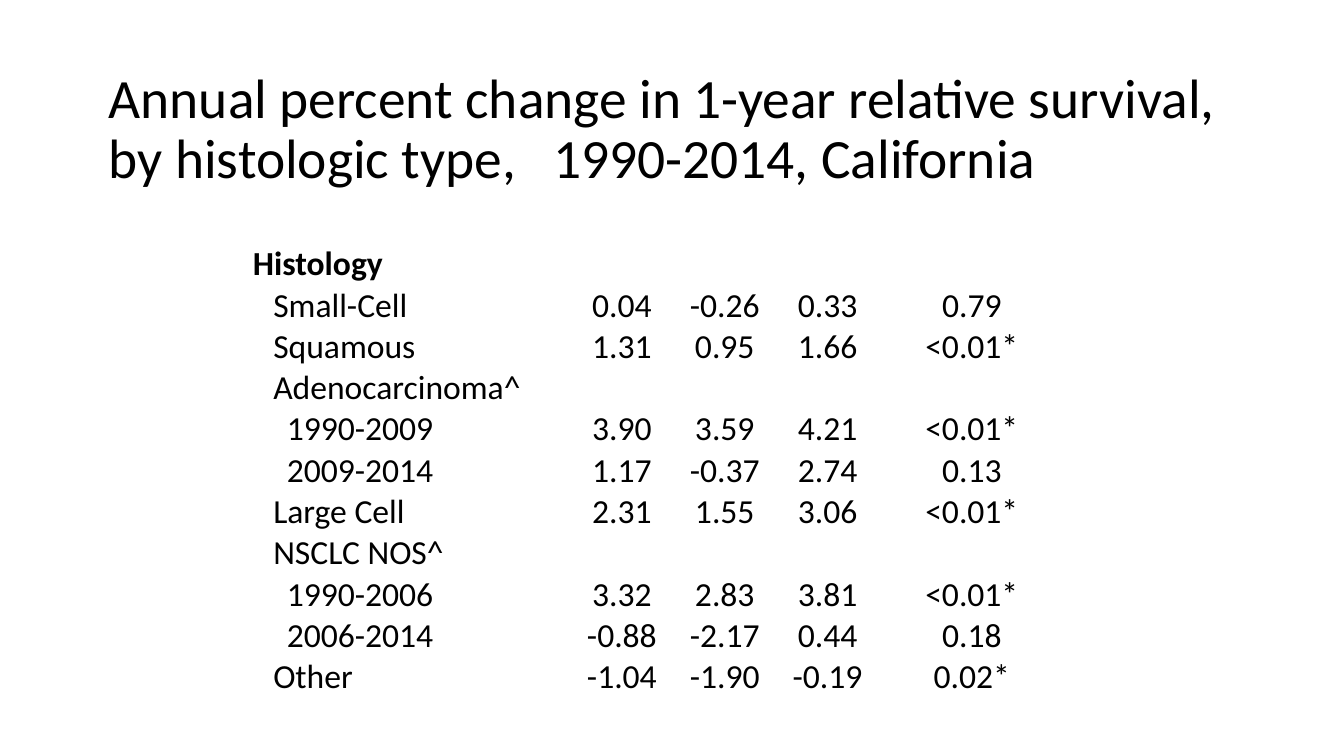
import pptx
import pptx.util
import pptx.dml.color
import pptx.enum.text

Pt = pptx.util.Pt
ALIGN = pptx.enum.text.PP_ALIGN
ANCHOR = pptx.enum.text.MSO_ANCHOR

FONT = "Calibri"
BLACK = "000000"
TITLE = ("Annual percent change in 1-year relative survival, "
         "by histologic type,   1990-2014, California")
WIDTHS = [227.5, 73.5, 73.5, 73.5, 132.5]
INDENTS = [0.7, 15.2, 24.9]
ROWS = [
    (0, "Histology"),
    (1, "Small-Cell", "0.04", "-0.26", "0.33", "0.79"),
    (1, "Squamous", "1.31", "0.95", "1.66", "<0.01*"),
    (1, "Adenocarcinoma^"),
    (2, "1990-2009", "3.90", "3.59", "4.21", "<0.01*"),
    (2, "2009-2014", "1.17", "-0.37", "2.74", "0.13"),
    (1, "Large Cell", "2.31", "1.55", "3.06", "<0.01*"),
    (1, "NSCLC NOS^"),
    (2, "1990-2006", "3.32", "2.83", "3.81", "<0.01*"),
    (2, "2006-2014", "-0.88", "-2.17", "0.44", "0.18"),
    (1, "Other", "-1.04", "-1.90", "-0.19", "0.02*"),
]


def color(code):
    """Turn a hex string into a colour."""
    return pptx.dml.color.RGBColor.from_string(code)


def style(para, size, bold=False):
    """Set the font of a paragraph."""
    font = para.font
    font.name = FONT
    font.size = Pt(size)
    font.bold = bold
    font.color.rgb = color(BLACK)


def add_title(slide, text):
    """Add the slide heading."""
    box = slide.shapes.add_textbox(Pt(70.6), Pt(41), Pt(828), Pt(104.4))
    frame = box.text_frame
    frame.word_wrap = True
    frame.vertical_anchor = ANCHOR.MIDDLE
    para = frame.paragraphs[0]
    para.text = text
    para.line_spacing = 0.9
    style(para, 39.6)


def fill_cell(cell, text, left, align, bold):
    """Write one table cell without a fill."""
    cell.fill.background()
    cell.margin_left = Pt(left)
    cell.margin_right = cell.margin_top = Pt(0.7)
    cell.margin_bottom = Pt(0)
    cell.vertical_anchor = ANCHOR.BOTTOM
    para = cell.text_frame.paragraphs[0]
    para.text = text
    para.alignment = align
    style(para, 24, bold)


def add_grid(slide):
    """Add the table of survival changes by histology."""
    high = 29.5
    frame = slide.shapes.add_table(
        len(ROWS), len(WIDTHS), Pt(180), Pt(173.5),
        Pt(sum(WIDTHS)), Pt(high * len(ROWS)))
    table = frame.table
    table.first_row = False
    table.horz_banding = False
    for col, width in zip(table.columns, WIDTHS):
        col.width = Pt(width)
    for row, (level, label, *values) in zip(table.rows, ROWS):
        row.height = Pt(high)
        first, *rest = row.cells
        fill_cell(first, label, INDENTS[level], ALIGN.LEFT, level == 0)
        for cell, value in zip(rest, values or [""] * len(rest)):
            fill_cell(cell, value, 0.7, ALIGN.CENTER, False)


def main():
    """Build and save the slide."""
    deck = pptx.Presentation()
    deck.slide_width = Pt(960)
    deck.slide_height = Pt(540)
    slide = deck.slides.add_slide(deck.slide_layouts[6])
    add_title(slide, TITLE)
    add_grid(slide)
    deck.save("out.pptx")


if __name__ == "__main__":
    main()
